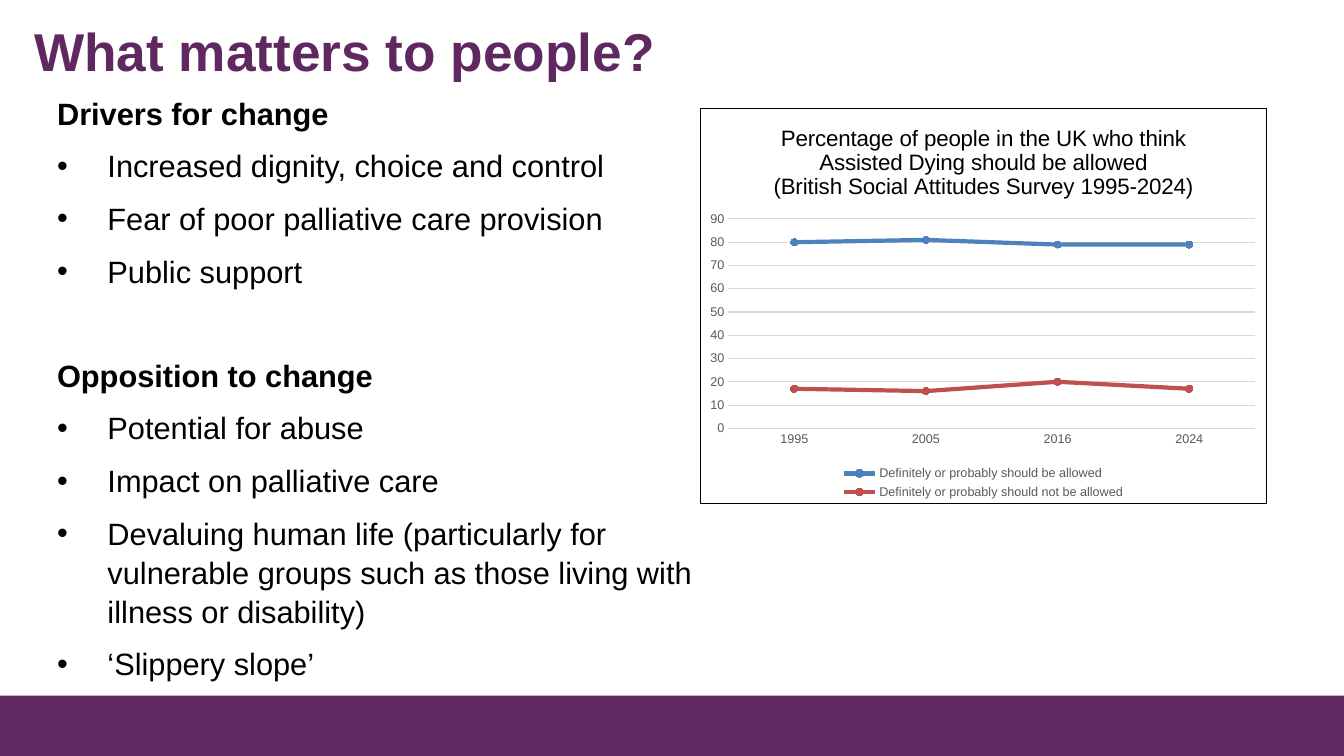
from lxml import etree
from pptx import Presentation
from pptx.chart.data import CategoryChartData
from pptx.dml.color import RGBColor
from pptx.enum.chart import (XL_CHART_TYPE as ChartType, XL_LEGEND_POSITION as LegendPos,
                             XL_MARKER_STYLE as Marker, XL_TICK_MARK as Tick)
from pptx.enum.shapes import MSO_SHAPE as Shape
from pptx.oxml import parse_xml
from pptx.oxml.ns import nsdecls, qn
from pptx.util import Cm, Pt

PURPLE, BLACK, GREY, LIGHT = "5F2861", "000000", "595959", "D9D9D9"


def color(hex_string):
    return RGBColor.from_string(hex_string)


def style(font, size, hex_string, bold=False):
    font.name, font.size, font.bold = "Arial", Pt(size), bold
    font.color.rgb = color(hex_string)


prs = Presentation()
prs.slide_width, prs.slide_height = Cm(33.87), Cm(19.05)
s = prs.slides.add_slide(prs.slide_layouts[6])

# Footer band
band = s.shapes.add_shape(Shape.RECTANGLE, 0, Cm(17.53), prs.slide_width, Cm(1.52))
band.shadow.inherit = False
band.fill.solid()
band.fill.fore_color.rgb = color(PURPLE)
band.line.fill.background()

# Title
tf = s.shapes.add_textbox(Cm(0.61), Cm(0.2), Cm(30.48), Cm(1.85)).text_frame
tf.word_wrap = True
tf.margin_top = Cm(0.27)
tf.text = "What matters to people?"
style(tf.paragraphs[0].runs[0].font, 38, PURPLE, bold=True)

# Drivers and opposition
sections = [
    ("Drivers for change", [
        "Increased dignity, choice and control",
        "Fear of poor palliative care provision",
        "Public support"]),
    ("Opposition to change", [
        "Potential for abuse",
        "Impact on palliative care",
        "Devaluing human life (particularly for vulnerable groups "
        "such as those living with illness or disability)",
        "‘Slippery slope’"]),
]
tf = s.shapes.add_textbox(Cm(1.19), Cm(2.08), Cm(17.04), Cm(14.91)).text_frame
tf.word_wrap = True
tf.margin_left = tf.margin_right = tf.margin_top = tf.margin_bottom = Cm(0.25)
for i, (heading, points) in enumerate(sections):
    for j, text in enumerate([heading] + points):
        first = i == 0 and j == 0
        p = tf.paragraphs[0] if first else tf.add_paragraph()
        p.text = text
        p.line_spacing = 1.05
        p.space_before = Pt(0 if first else 10 if j else 46.4)
        if j:
            pPr = p._p.get_or_add_pPr()
            pPr.set("marL", str(Cm(1.27)))
            pPr.set("indent", str(-Cm(1.27)))
            etree.SubElement(pPr, qn("a:buFont")).set("typeface", "Arial")
            etree.SubElement(pPr, qn("a:buChar")).set("char", "•")
        style(p.runs[0].font, 22, BLACK, bold=j == 0)

# Survey chart
data = CategoryChartData()
data.categories = ["1995", "2005", "2016", "2024"]
data.add_series("Definitely or probably should be allowed", (80, 81, 79, 79))
data.add_series("Definitely or probably should not be allowed", (17, 16, 20, 17))
chart = s.shapes.add_chart(ChartType.LINE_MARKERS, Cm(17.63), Cm(2.72),
                           Cm(14.3), Cm(9.98), data).chart
style(chart.font, 10, BLACK)

tf = chart.chart_title.text_frame
tf.text = ("Percentage of people in the UK who think Assisted Dying should be allowed\n"
           "(British Social Attitudes Survey 1995-2024)")
for p in tf.paragraphs:
    style(p.runs[0].font, 16, BLACK)
chart.chart_title.include_in_layout = False

# Series
for series, hex_string in zip(chart.plots[0].series, ("4F81BD", "C0504D")):
    series.smooth = False
    series.format.line.color.rgb = color(hex_string)
    series.format.line.width = Pt(3)
    series.marker.style = Marker.CIRCLE
    series.marker.size = 5
    series.marker.format.fill.solid()
    series.marker.format.fill.fore_color.rgb = color(hex_string)
    series.marker.format.line.color.rgb = color(hex_string)

# Axes and legend
years, percent = chart.category_axis, chart.value_axis
for axis in (years, percent):
    axis.major_tick_mark = axis.minor_tick_mark = Tick.NONE
    style(axis.tick_labels.font, 9, GREY)
percent.minimum_scale, percent.maximum_scale, percent.major_unit = 0, 90, 10
percent.has_major_gridlines = True
percent.format.line.fill.background()
for line in (years.format.line, percent.major_gridlines.format.line):
    line.color.rgb = color(LIGHT)
    line.width = Pt(0.75)

chart.has_legend = True
chart.legend.position = LegendPos.BOTTOM
chart.legend.include_in_layout = False
style(chart.legend.font, 9, GREY)

# Plot area position as fractions of the chart
plot_area = chart._chartSpace.chart.plotArea
for old in plot_area.findall(qn("c:layout")):
    plot_area.remove(old)
plot_area.insert(0, parse_xml(
    f'<c:layout {nsdecls("c")}><c:manualLayout><c:layoutTarget val="inner"/>'
    '<c:xMode val="edge"/><c:yMode val="edge"/><c:x val="0.05"/><c:y val="0.28"/>'
    '<c:w val="0.93"/><c:h val="0.53"/></c:manualLayout></c:layout>'))

# Chart border
chart._chartSpace.chart.addnext(parse_xml(
    f'<c:spPr {nsdecls("c", "a")}><a:solidFill><a:srgbClr val="FFFFFF"/></a:solidFill>'
    f'<a:ln w="{Pt(0.75)}"><a:solidFill><a:srgbClr val="{BLACK}"/></a:solidFill></a:ln></c:spPr>'))

prs.save("out.pptx")
